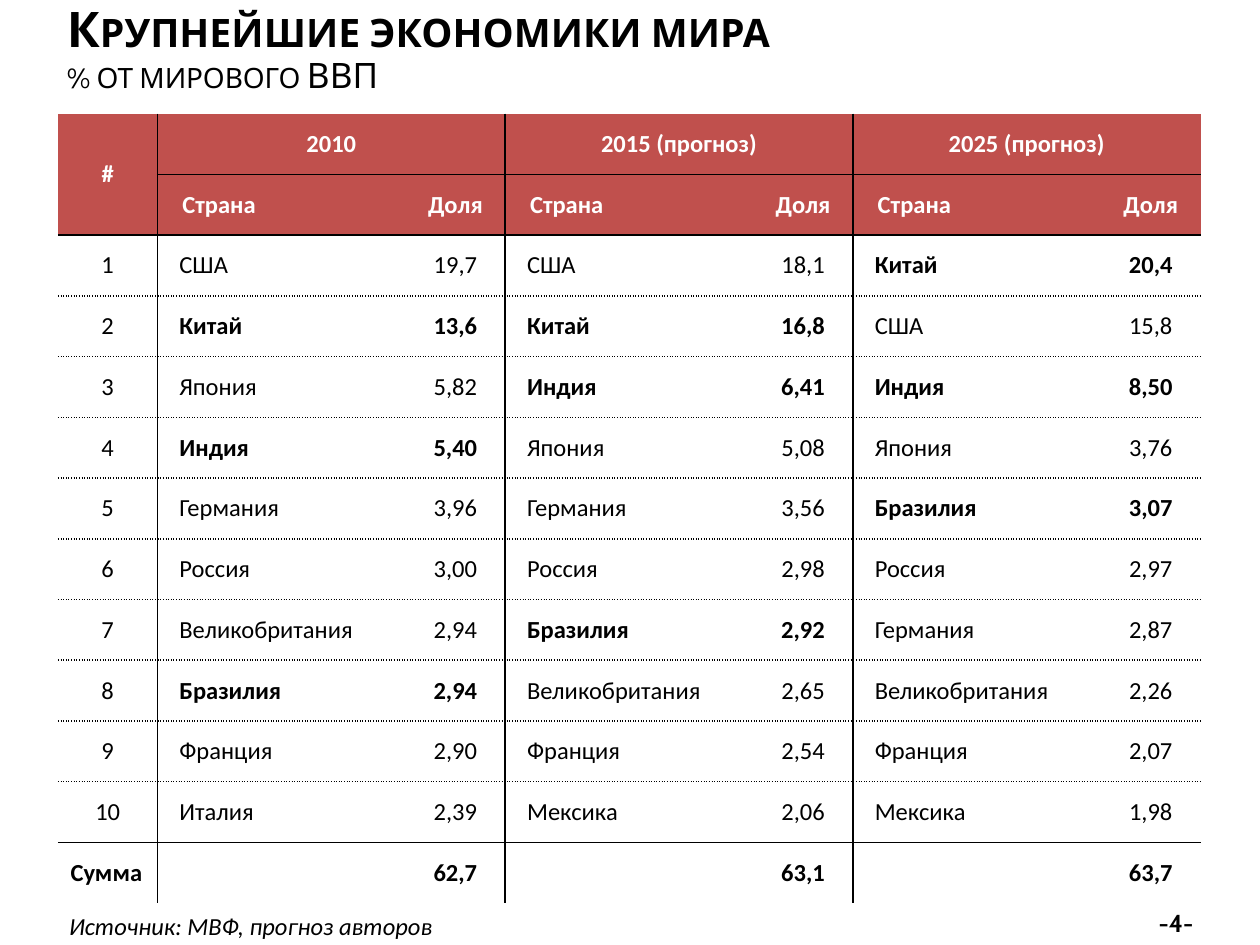
from lxml import etree
from pptx import Presentation
from pptx.dml.color import RGBColor
from pptx.enum.text import MSO_ANCHOR, MSO_AUTO_SIZE, PP_ALIGN
from pptx.oxml.ns import qn
from pptx.util import Pt

COLORS = {"ink": "000000", "header": "C0504D", "header_text": "FFFFFF"}
EMERGING = {"Китай", "Индия", "Бразилия"}
RANKINGS = {
    "2010": [("США", "19,7"), ("Китай", "13,6"), ("Япония", "5,82"), ("Индия", "5,40"),
             ("Германия", "3,96"), ("Россия", "3,00"), ("Великобритания", "2,94"),
             ("Бразилия", "2,94"), ("Франция", "2,90"), ("Италия", "2,39")],
    "2015 (прогноз)": [("США", "18,1"), ("Китай", "16,8"), ("Индия", "6,41"), ("Япония", "5,08"),
                       ("Германия", "3,56"), ("Россия", "2,98"), ("Бразилия", "2,92"),
                       ("Великобритания", "2,65"), ("Франция", "2,54"), ("Мексика", "2,06")],
    "2025 (прогноз)": [("Китай", "20,4"), ("США", "15,8"), ("Индия", "8,50"), ("Япония", "3,76"),
                       ("Бразилия", "3,07"), ("Россия", "2,97"), ("Германия", "2,87"),
                       ("Великобритания", "2,26"), ("Франция", "2,07"), ("Мексика", "1,98")],
}
TOTALS = ["62,7", "63,1", "63,7"]


def add_text(p, text, size=14, font="Calibri", color="ink", bold=False, italic=False,
             small_caps=False, align=PP_ALIGN.LEFT, indent=0):
    """Append a formatted run to the paragraph, with a first-line indent in points."""
    p.alignment = align
    if indent:
        p._p.get_or_add_pPr().set("indent", str(Pt(indent)))
    r = p.add_run()
    r.text = text
    r.font.size, r.font.name = Pt(size), font
    r.font.bold, r.font.italic = bold, italic
    r.font.color.rgb = RGBColor.from_string(COLORS[color])
    if small_caps:
        r.font._element.set("cap", "small")


def set_borders(cell, **dashes):
    """Set the sides L, R, T, B, in that order, to a dash style or to None for no line."""
    tcPr = cell._tc.get_or_add_tcPr()
    for side, dash in dashes.items():
        ln = etree.SubElement(tcPr, qn(f"a:ln{side}"), w=str(Pt(1)))
        if dash is None:
            etree.SubElement(ln, qn("a:noFill"))
            continue
        fill = etree.SubElement(ln, qn("a:solidFill"))
        etree.SubElement(fill, qn("a:srgbClr"), val=COLORS["ink"])
        etree.SubElement(ln, qn("a:prstDash"), val=dash)


prs = Presentation()
prs.slide_width, prs.slide_height = Pt(720), Pt(540)
s = prs.slides.add_slide(prs.slide_layouts[5])

# Title
title = s.shapes.title
title.left, title.top, title.width, title.height = Pt(31), Pt(-0.7), Pt(657.4), Pt(65.5)
tf = title.text_frame
tf.vertical_anchor, tf.auto_size = MSO_ANCHOR.TOP, MSO_AUTO_SIZE.NONE
p = tf.paragraphs[0]
p.line_spacing = 0.9
add_text(p, "Крупнейшие экономики мира", size=28, font="Cabin", bold=True, small_caps=True)
p.add_line_break()
add_text(p, "% от мирового ВВП", size=20, font="Cabin", small_caps=True)

# Source and page number
for text, box, anchor, style in [
    ("Источник: МВФ, прогноз авторов", (32.4, 517, 652.3, 24.5), MSO_ANCHOR.TOP,
     dict(italic=True)),
    ("-4-", (649.4, 514, 39.6, 26.6), MSO_ANCHOR.MIDDLE,
     dict(font="Cabin", bold=True, align=PP_ALIGN.RIGHT)),
]:
    tf = s.shapes.add_textbox(*map(Pt, box)).text_frame
    tf.word_wrap, tf.vertical_anchor = True, anchor
    add_text(tf.paragraphs[0], text, **style)

# Table contents: two header rows, ten ranks, totals
rows = [["#"], [""]] + [[str(rank)] for rank in range(1, 11)] + [["Сумма"]]
for (year, ranking), total in zip(RANKINGS.items(), TOTALS):
    for row, pair in zip(rows, [(year, ""), ("Страна", "Доля"), *ranking, ("", total)]):
        row.extend(pair)

last_row, last_col = len(rows) - 1, len(rows[0]) - 1
frame = s.shapes.add_table(len(rows), len(rows[0]), Pt(33.1), Pt(65), Pt(652.2), Pt(451.1))
table = frame.table
table.first_row = table.horz_banding = False
for row in table.rows:
    row.height = Pt(34.7)
for j, column in enumerate(table.columns):
    column.width = Pt(141.8 if j % 2 else 56.9)

below = ["solid"] * 2 + ["sysDot"] * 9 + ["solid", None]
for i, row in enumerate(rows):
    header, ranked = i < 2, 2 <= i < last_row
    for j, text in enumerate(row):
        cell = table.cell(i, j)
        country = j % 2 == 1
        set_borders(
            cell,
            L="solid" if country else None,
            R="solid" if not country and j < last_col else None,
            T=below[i - 1] if i and (i, j) != (1, 0) else None,
            B=below[i] if (i, j) != (0, 0) else None,
        )
        cell.vertical_anchor = MSO_ANCHOR.MIDDLE
        if header:
            cell.fill.solid()
            cell.fill.fore_color.rgb = RGBColor.from_string(COLORS["header"])
        else:
            cell.fill.background()
        if ranked and j:
            cell.margin_left = Pt(6.5 if country else 0)
            cell.margin_right = cell.margin_top = cell.margin_bottom = 0
        if not text:
            continue
        left = (country and i > 0) or text == "Сумма"
        emerging = ranked and j > 0 and row[j if country else j - 1] in EMERGING
        add_text(
            cell.text_frame.paragraphs[0], text,
            color="header_text" if header else "ink",
            bold=not ranked or emerging,
            align=PP_ALIGN.LEFT if left else PP_ALIGN.CENTER,
            indent=(7 if header else 6) if left and country else 0,
        )

table.cell(0, 0).merge(table.cell(1, 0))
for j in range(1, last_col, 2):
    table.cell(0, j).merge(table.cell(0, j + 1))

prs.save("out.pptx")
